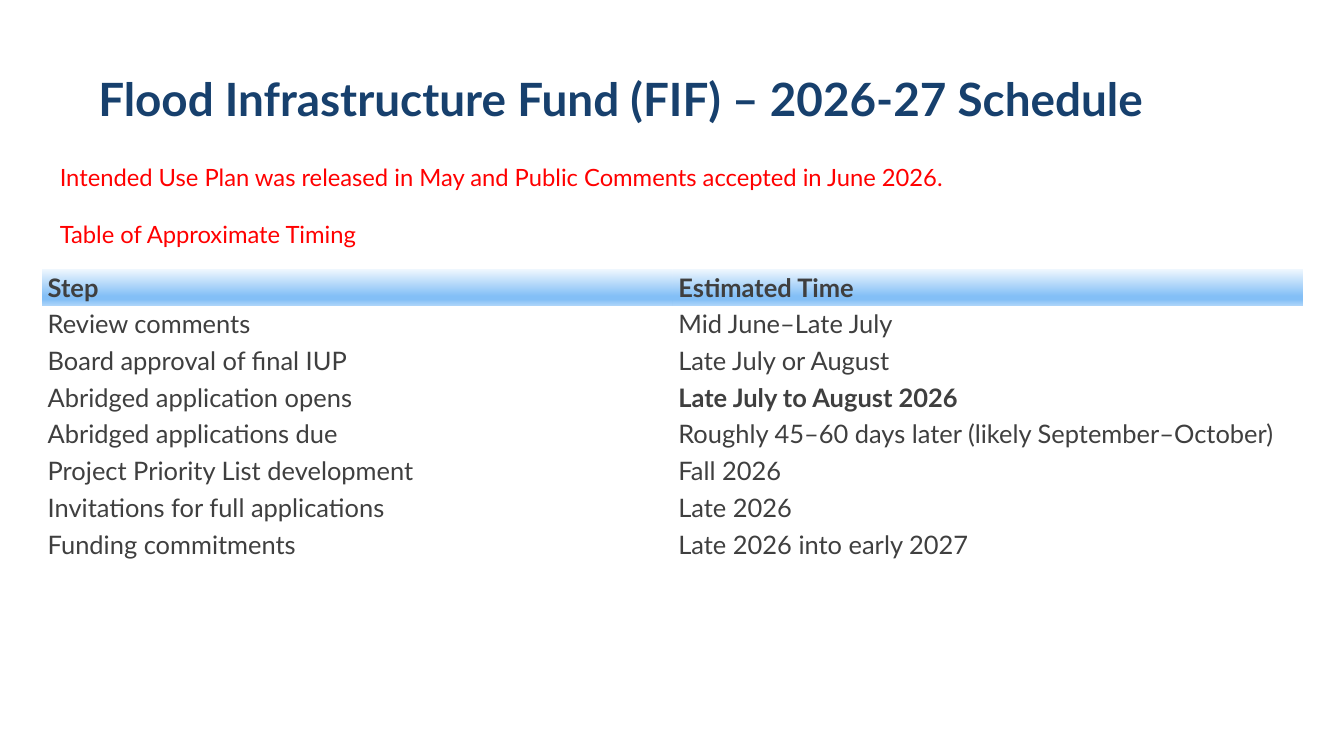
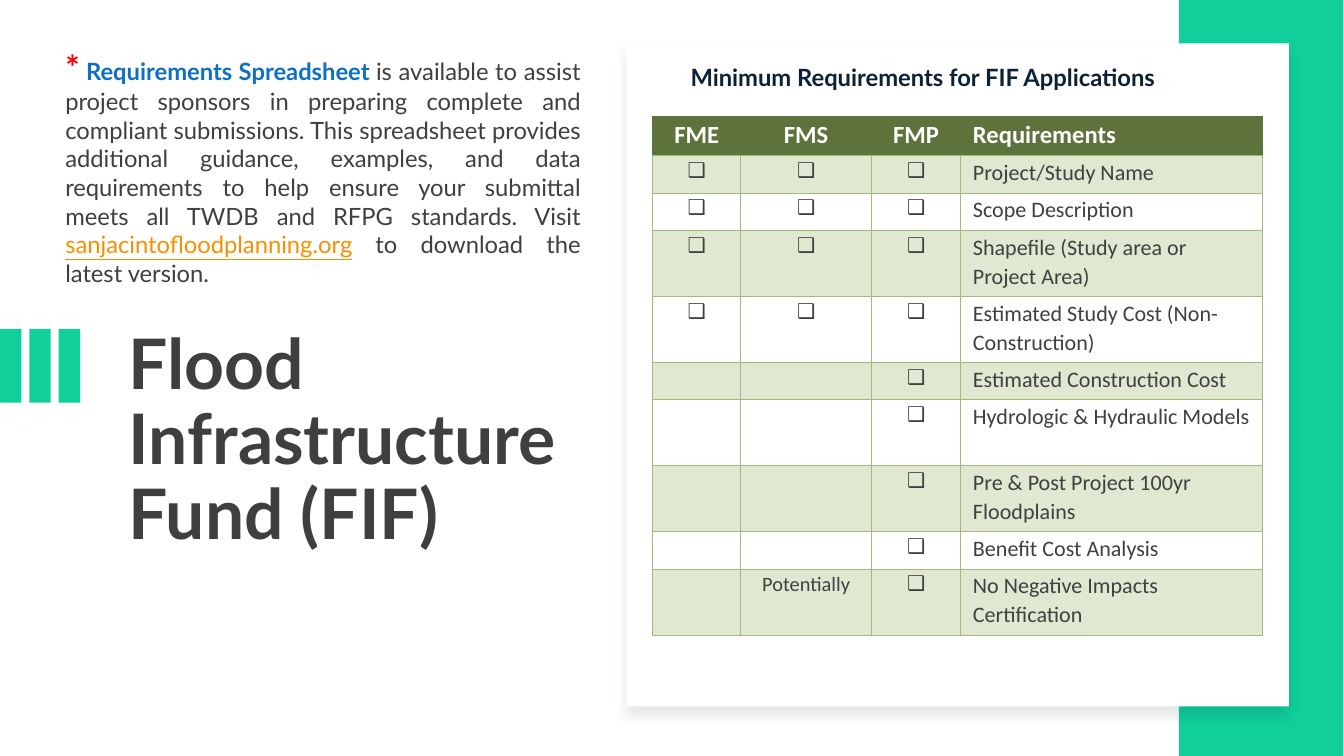
from lxml import etree
from pptx import Presentation
from pptx.dml.color import RGBColor
from pptx.enum.shapes import MSO_SHAPE
from pptx.enum.text import MSO_ANCHOR, PP_ALIGN
from pptx.oxml import parse_xml
from pptx.oxml.ns import nsdecls, qn
from pptx.util import Inches, Pt

RECT = MSO_SHAPE.RECTANGLE
TOP, MIDDLE, BOTTOM = MSO_ANCHOR.TOP, MSO_ANCHOR.MIDDLE, MSO_ANCHOR.BOTTOM
LEFT, CENTER, JUSTIFY = PP_ALIGN.LEFT, PP_ALIGN.CENTER, PP_ALIGN.JUSTIFY

COLORS = {
    "navy": "17406D", "ink": "0C2036", "text": "3F3F3F", "mark": "404040",
    "red": "FF0000", "blue": "0F6FC6", "orange": "F49100", "white": "FFFFFF",
    "teal": "10CF9B", "olive": "5E733B", "grid": "A2BA79", "band": "E0E8D2",
}
HEADER_STOPS = [(0, "F1F8FE"), (74, "83BFF6"), (83, "83BFF6"), (100, "ACD4F9")]
NO_STYLE = "{2D5ABB26-0587-4C30-8999-92F81FD0307C}"
FONT, TABLE_FONT, MARK_FONT = "Lato", "Calibri", "Arial"
MARK = "❑"

SCHEDULE = [
    ("Step", "Estimated Time"),
    ("Review comments", "Mid June–Late July"),
    ("Board approval of final IUP", "Late July or August"),
    ("Abridged application opens", "Late July to August 2026"),
    ("Abridged applications due", "Roughly 45–60 days later (likely September–October)"),
    ("Project Priority List development", "Fall 2026"),
    ("Invitations for full applications", "Late 2026"),
    ("Funding commitments", "Late 2026 into early 2027"),
]
ALL, FMP_ONLY = (MARK, MARK, MARK), ("", "", MARK)
REQUIREMENTS = [
    ("FME", "FMS", "FMP", "Requirements"),
    (*ALL, "Project/Study Name"),
    (*ALL, "Scope Description"),
    (*ALL, "Shapefile (Study area or Project Area)"),
    (*ALL, "Estimated Study Cost (Non-Construction)"),
    (*FMP_ONLY, "Estimated Construction Cost"),
    (*FMP_ONLY, "Hydrologic & Hydraulic Models"),
    (*FMP_ONLY, "Pre & Post Project 100yr Floodplains"),
    (*FMP_ONLY, "Benefit Cost Analysis"),
    ("", "Potentially", MARK, "No Negative Impacts Certification"),
]
SHORT, TALL = 0.61, 1.08
REQUIREMENT_HEIGHTS = [0.65, SHORT, SHORT, TALL, TALL, SHORT, TALL, TALL, SHORT, TALL]


def rgb(name):
    return RGBColor.from_string(COLORS[name])


def set_font(font, size=None, color=None, bold=None, name=FONT):
    font.name = name
    if size:
        font.size = Pt(size)
    if color:
        font.color.rgb = rgb(color)
    if bold is not None:
        font.bold = bold


def set_borders(cell, color):
    """Draw a 1 pt line on all four sides; call before the fill is set."""
    for side in ("lnL", "lnR", "lnT", "lnB"):
        ln = etree.SubElement(cell._tc.get_or_add_tcPr(), qn("a:" + side), w=str(Pt(1)))
        fill = etree.SubElement(ln, qn("a:solidFill"))
        etree.SubElement(fill, qn("a:srgbClr"), val=COLORS[color])


def set_gradient(cell, stops):
    gs = "".join(f'<a:gs pos="{pos * 1000}"><a:srgbClr val="{color}"/></a:gs>'
                 for pos, color in stops)
    cell._tc.get_or_add_tcPr().append(parse_xml(
        f'<a:gradFill {nsdecls("a")}><a:gsLst>{gs}</a:gsLst>'
        '<a:lin ang="5400000" scaled="0"/></a:gradFill>'))


class Deck:
    def __init__(self, width, height):
        self.prs = Presentation()
        self.prs.slide_width, self.prs.slide_height = Inches(width), Inches(height)
        self.slide = None

    def add_slide(self):
        self.slide = self.prs.slides.add_slide(self.prs.slide_layouts[6])

    def text(self, box, paragraphs, size, color, bold=False, align=LEFT,
             anchor=TOP, spacing=None, gap=0):
        """Add a text box; each paragraph is a string or a list of (text, style) runs."""
        tf = self.slide.shapes.add_textbox(*map(Inches, box)).text_frame
        tf.word_wrap, tf.vertical_anchor = True, anchor
        for i, content in enumerate(paragraphs):
            p = tf.add_paragraph() if i else tf.paragraphs[0]
            p.alignment = align
            if spacing:
                p.line_spacing = spacing
            if i:
                p.space_before = Pt(gap)
            set_font(p.font, size, color, bold)
            runs = [(content, {})] if isinstance(content, str) else content
            for words, style in runs:
                r = p.add_run()
                r.text = words
                style = dict(style)
                r.font.underline = style.pop("underline", None)
                set_font(r.font, **style)

    def title(self, box, words, size, color, anchor=TOP):
        self.text(box, [words], size, color, bold=True, anchor=anchor, spacing=0.9)

    def rect(self, box, color):
        sp = self.slide.shapes.add_shape(RECT, *map(Inches, box))
        sp.shadow.inherit = False
        sp.fill.solid()
        sp.fill.fore_color.rgb = rgb(color)
        sp.line.fill.background()
        return sp

    def card(self, box):
        """Add a white panel with a soft shadow below it."""
        effects = self.rect(box, "white")._element.spPr.find(qn("a:effectLst"))
        effects.append(parse_xml(
            f'<a:outerShdw {nsdecls("a")} blurRad="{Pt(15)}" dist="{Pt(11)}" '
            'dir="5400000" algn="t" rotWithShape="0"><a:srgbClr val="000000">'
            '<a:alpha val="10000"/></a:srgbClr></a:outerShdw>'))

    def table(self, left, top, widths, heights, rows, style_cell):
        """Add an unstyled table; style_cell(cell, row, column) formats each cell."""
        frame = self.slide.shapes.add_table(
            len(rows), len(widths), Inches(left), Inches(top),
            Inches(sum(widths)), Inches(sum(heights)))
        table = frame.table
        table.horz_banding = False
        table._tbl.tblPr.find(qn("a:tableStyleId")).text = NO_STYLE
        for column, width in zip(table.columns, widths):
            column.width = Inches(width)
        for i, (row, height) in enumerate(zip(rows, heights)):
            table.rows[i].height = Inches(height)
            for j, words in enumerate(row):
                cell = table.cell(i, j)
                cell.text = words
                style_cell(cell, i, j)


def style_schedule(cell, row, column):
    cell.vertical_anchor = MIDDLE
    bold = row == 0 or (row, column) == (3, 1)
    set_font(cell.text_frame.paragraphs[0].font, 30, "text", bold)
    if row == 0:
        set_gradient(cell, HEADER_STOPS)
    else:
        cell.fill.background()


def style_requirement(cell, row, column):
    header = row == 0
    set_borders(cell, "olive" if header else "grid")
    if header or row % 2:
        cell.fill.solid()
        cell.fill.fore_color.rgb = rgb("olive" if header else "band")
    else:
        cell.fill.background()
    cell.margin_left = cell.margin_right = Inches(0.2)
    cell.margin_top, cell.margin_bottom = Inches(0.03), 0
    p = cell.text_frame.paragraphs[0]
    p.alignment = LEFT if column == 3 else CENTER
    p.line_spacing, p.space_after = 1.07, Pt(6)
    if header:
        set_font(p.font, 29, "white", True, TABLE_FONT)
    else:
        name = MARK_FONT if cell.text == MARK else TABLE_FONT
        set_font(p.font, 26 if column == 3 else 24, "mark", False, name)


def schedule_slide(deck):
    deck.add_slide()
    deck.title((1.51, 0.58, 18.74, 1.54),
               "Flood Infrastructure Fund (FIF) – 2026-27 Schedule", 54, "navy", BOTTOM)
    deck.table(0.68, 4.4, [10.32] * 2, [0.6] * len(SCHEDULE), SCHEDULE, style_schedule)
    deck.text((0.88, 2.62, 19.38, 1.51), [
        "Intended Use Plan was released in May and Public Comments accepted in June 2026.",
        "Table of Approximate Timing",
    ], 28, "red", gap=33.6)


def requirements_slide(deck):
    deck.add_slide()
    deck.title((2.01, 5.34, 7.28, 4.31), "Flood Infrastructure Fund (FIF)", 82, "text")
    for i in range(3):
        deck.rect((i * 0.48, 5.38, 0.35, 1.21), "teal")
    deck.rect((19.29, 0, 2.69, 12.37), "teal")
    deck.card((10.25, 0.71, 10.84, 10.85))
    deck.table(10.68, 1.9, [1.44, 2.14, 1.46, 4.94], REQUIREMENT_HEIGHTS,
               REQUIREMENTS, style_requirement)
    deck.text((0.97, 0.71, 8.63, 4.07), [[
        ("*", {"size": 40, "color": "red", "bold": True}),
        (" Requirements Spreadsheet ", {"color": "blue", "bold": True}),
        ("is available to assist project sponsors in preparing complete and compliant "
         "submissions. This spreadsheet provides additional guidance, examples, and data "
         "requirements to help ensure your submittal meets all TWDB and RFPG standards. "
         "Visit ", {}),
        ("sanjacintofloodplanning.org", {"color": "orange", "underline": True}),
        (" to download the latest version.", {}),
    ]], 28, "text", align=JUSTIFY)
    deck.text((11.2, 0.97, 8.94, 0.57), ["Minimum Requirements for FIF Applications"],
              28, "ink", bold=True)


def main():
    deck = Deck(21.99, 12.37)
    schedule_slide(deck)
    requirements_slide(deck)
    deck.prs.save("out.pptx")


if __name__ == "__main__":
    main()
